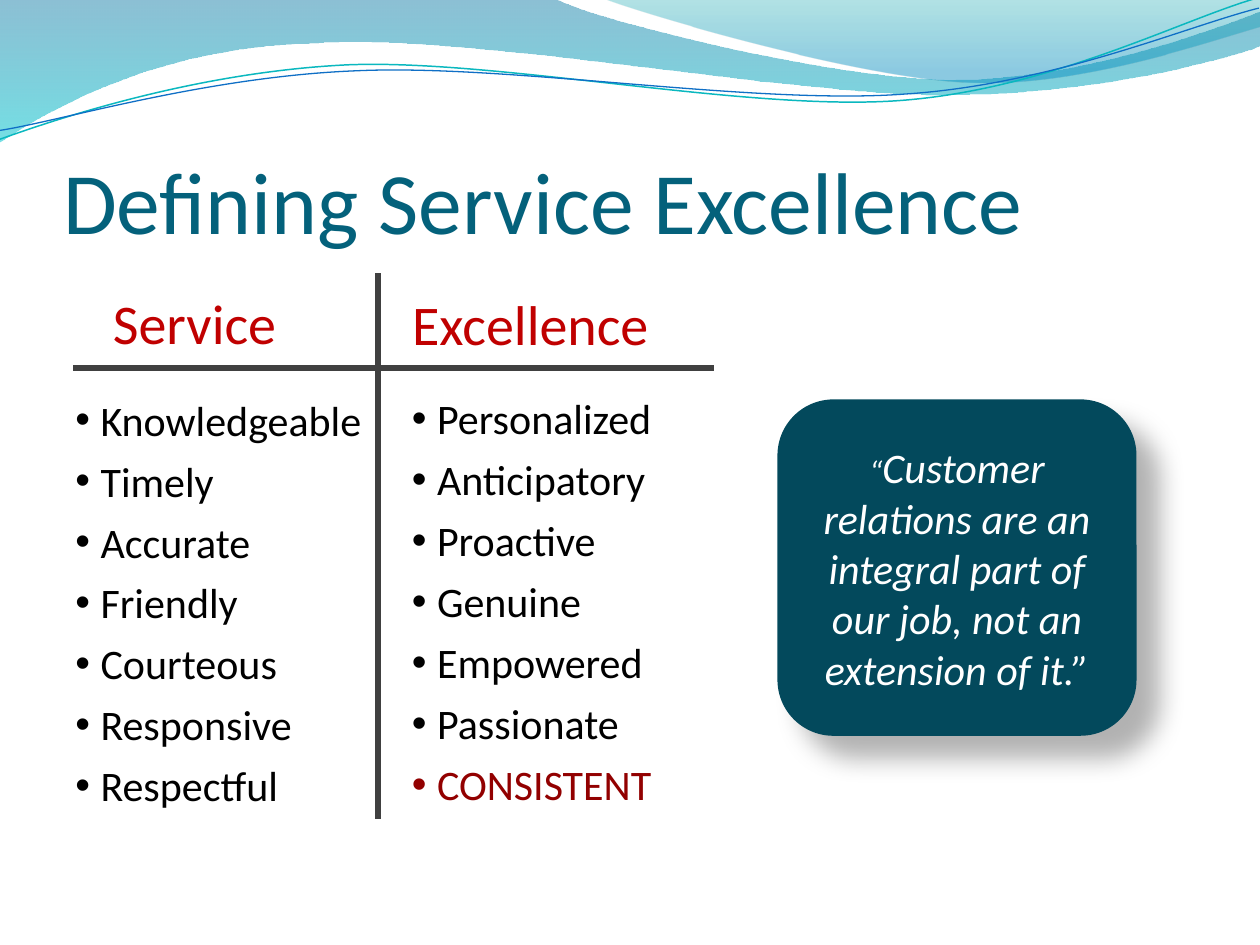
from lxml.etree import SubElement
from pptx import Presentation
from pptx.dml.color import RGBColor
from pptx.enum.shapes import MSO_CONNECTOR as CONNECTOR, MSO_SHAPE as SHAPE
from pptx.enum.text import MSO_ANCHOR as ANCHOR, MSO_AUTO_SIZE as AUTO, PP_ALIGN as ALIGN
from pptx.oxml.ns import qn
from pptx.util import Emu, Pt

PX = 9144  # 100 px to the inch
FONT = "Calibri"
TITLE_TEAL = RGBColor(0x04, 0x61, 0x7B)
CARD_TEAL = RGBColor(0x03, 0x49, 0x5C)
RULE_GREY = RGBColor(0x40, 0x40, 0x40)
HEAD_RED = RGBColor(0xC0, 0x00, 0x00)
DARK_RED = RGBColor(0x92, 0x00, 0x00)
BLACK = RGBColor(0x00, 0x00, 0x00)
WHITE = RGBColor(0xFF, 0xFF, 0xFF)
WAVE_BLUE = RGBColor(0x00, 0x74, 0xA1)
WAVE_CYAN = RGBColor(0x00, 0xC6, 0xCF)
CREST_GREEN = RGBColor(0x00, 0xA1, 0xA9)
CREST_BLUE = RGBColor(0x00, 0x8B, 0xBF)
LINE_CYAN = RGBColor(0x0A, 0xB8, 0xBF)
LINE_BLUE = RGBColor(0x0F, 0x6F, 0xC6)


def px(*lengths):
    return [Emu(length * PX) for length in lengths]


def write(paragraph, text, size=24, color=BLACK, italic=None, align=None):
    """Add one formatted run to a paragraph."""
    run = paragraph.add_run()
    run.text = text
    run.font.name, run.font.size, run.font.italic = FONT, Pt(size), italic
    run.font.color.rgb = color
    if align is not None:
        paragraph.alignment = align


def add_color(parent, color, opacity):
    node = SubElement(parent, qn("a:srgbClr"), val=str(color))
    SubElement(node, qn("a:alpha"), val=str(opacity * 1000))


# Wave header
def add_curve(slide, start, *segments, closed=False):
    """Each segment holds one point (straight) or three (cubic curve)."""
    builder = slide.shapes.build_freeform(*start, scale=PX)
    builder.add_line_segments(sum(segments, []), close=closed)
    curve = builder.convert_to_shape()
    curve.shadow.inherit = False
    # Merge the three steps of each curved segment into one cubic
    outline = next(curve._element.iter(qn("a:path")))
    steps = iter(outline.findall(qn("a:lnTo")))
    for segment in segments:
        first, *rest = [next(steps) for _ in segment]
        if rest:
            cubic = SubElement(outline, qn("a:cubicBezTo"))
            first.addprevious(cubic)
            for step in (first, *rest):
                cubic.append(step[0])
                outline.remove(step)
    return curve


def add_wave(slide, stops, start, *segments):
    wave = add_curve(slide, start, *segments, closed=True)
    wave.line.fill.background()
    wave.fill.gradient()
    gradient = wave.fill._fill._gradFill
    for child in list(gradient):
        gradient.remove(child)
    stop_list = SubElement(gradient, qn("a:gsLst"))
    for position, color, opacity in stops:
        stop = SubElement(stop_list, qn("a:gs"), pos=str(position * 1000))
        add_color(stop, color, opacity)
    SubElement(gradient, qn("a:lin"), ang="5400000", scaled="0")


def add_strand(slide, color, width, start, *segments):
    strand = add_curve(slide, start, *segments)
    strand.rotation = 357.3
    strand.fill.background()
    strand.line.color.rgb, strand.line.width = color, Pt(width)


def add_header(slide):
    add_wave(slide, [(0, WAVE_BLUE, 45), (100, WAVE_CYAN, 55)],
             (0, 0), [(440, -1)],
             [(476, 17), (664, 63), (758, 63)], [(853, 63), (958, 26), (1000, 9)],
             [(1001, 36)],
             [(983, 44), (870, 76), (746, 75)], [(622, 75), (382, 28), (257, 34)],
             [(129, 36), (46, 83), (-1, 113)])
    add_wave(slide, [(0, CREST_GREEN, 30), (80, CREST_BLUE, 45)],
             (479, -1),
             [(509, 11), (682, 62), (769, 65)], [(856, 69), (961, 32), (1000, 21)],
             [(1000, 0)])
    add_strand(slide, LINE_CYAN, 0.85, (-2, 87),
               [(47, 72), (158, 41), (277, 41)], [(396, 42), (591, 93), (712, 90)],
               [(832, 87), (940, 36), (1000, 22)])
    add_strand(slide, LINE_BLUE, 0.75, (-2, 80),
               [(46, 75), (164, 45), (283, 46)], [(403, 46), (596, 88), (716, 85)],
               [(835, 83), (942, 42), (1001, 30)])


def add_title(slide, box, text):
    title = slide.shapes.title
    title.left, title.top, title.width, title.height = px(*box)
    frame = title.text_frame
    frame.auto_size, frame.vertical_anchor = AUTO.NONE, ANCHOR.BOTTOM
    frame.margin_left = frame.margin_right = frame.margin_bottom = 0
    write(frame.paragraphs[0], text, size=50, color=TITLE_TEAL, align=ALIGN.LEFT)


# Two-column chart
def add_rule(slide, *ends):
    rule = slide.shapes.add_connector(CONNECTOR.STRAIGHT, *px(*ends))
    rule.line.color.rgb, rule.line.width = RULE_GREY, Pt(3)
    SubElement(rule._element.spPr, qn("a:effectLst"))


def add_panel(slide, box):
    panel = slide.shapes.add_shape(SHAPE.ROUNDED_RECTANGLE, *px(*box))
    panel.shadow.inherit = False
    panel.fill.background()
    panel.line.fill.background()
    panel.text_frame.vertical_anchor = ANCHOR.MIDDLE
    return panel


def add_heading(slide, box, text):
    heading = add_panel(slide, box)
    write(heading.text_frame.paragraphs[0], text, size=32, color=HEAD_RED, align=ALIGN.CENTER)


def add_bullets(slide, box, words, accent=None):
    frame = slide.shapes.add_textbox(*px(*box)).text_frame
    frame.word_wrap, frame.auto_size = False, AUTO.SHAPE_TO_FIT_TEXT
    for index, word in enumerate(words):
        item = frame.add_paragraph() if index else frame.paragraphs[0]
        item.space_before = Pt(6)
        props = item._p.get_or_add_pPr()
        props.set("marL", str(20 * PX))
        props.set("indent", str(-20 * PX))
        SubElement(props, qn("a:buFont"), typeface="Arial")
        SubElement(props, qn("a:buChar"), char="•")
        write(item, word, color=DARK_RED if word == accent else BLACK)


def add_comparison(slide, box):
    left, top, width, height = box
    divider = left + 242
    add_rule(slide, divider, top, divider, top + height)
    add_rule(slide, left, top + 75, left + width, top + 75)
    add_heading(slide, (left + 9, top + 1, 175, 75), "Service")
    add_heading(slide, (divider, top + 1, 242, 77), "Excellence")
    add_bullets(slide, (left - 8, top + 91, 250, 343),
                ["Knowledgeable", "Timely", "Accurate", "Friendly",
                 "Courteous", "Responsive", "Respectful"])
    add_bullets(slide, (divider + 17, top + 90, 212, 343),
                ["Personalized", "Anticipatory", "Proactive", "Genuine",
                 "Empowered", "Passionate", "CONSISTENT"], accent="CONSISTENT")


# Quote card
def add_quote(slide, box):
    card = add_panel(slide, box)
    card.fill.solid()
    card.fill.fore_color.rgb = CARD_TEAL
    effects = card._element.spPr.find(qn("a:effectLst"))
    shadow = SubElement(effects, qn("a:outerShdw"), blurRad=str(Pt(15)), dist=str(Pt(18)),
                        dir=str(45 * 60000), algn="tl", rotWithShape="0")
    add_color(shadow, BLACK, 30)
    quote = card.text_frame.paragraphs[0]
    write(quote, "“", size=18, color=WHITE, italic=True, align=ALIGN.CENTER)
    write(quote, "Customer relations are an integral part of our job, not an extension of it.”",
          color=WHITE, italic=True)


def main():
    deck = Presentation()
    deck.slide_width, deck.slide_height = px(1000, 750)
    slide = deck.slides.add_slide(deck.slide_layouts[5])
    add_header(slide)
    add_title(slide, (50, 75, 900, 125), "Defining Service Excellence")
    add_comparison(slide, (58, 217, 509, 433))
    add_quote(slide, (617, 317, 285, 267))
    deck.save("out.pptx")


if __name__ == "__main__":
    main()
